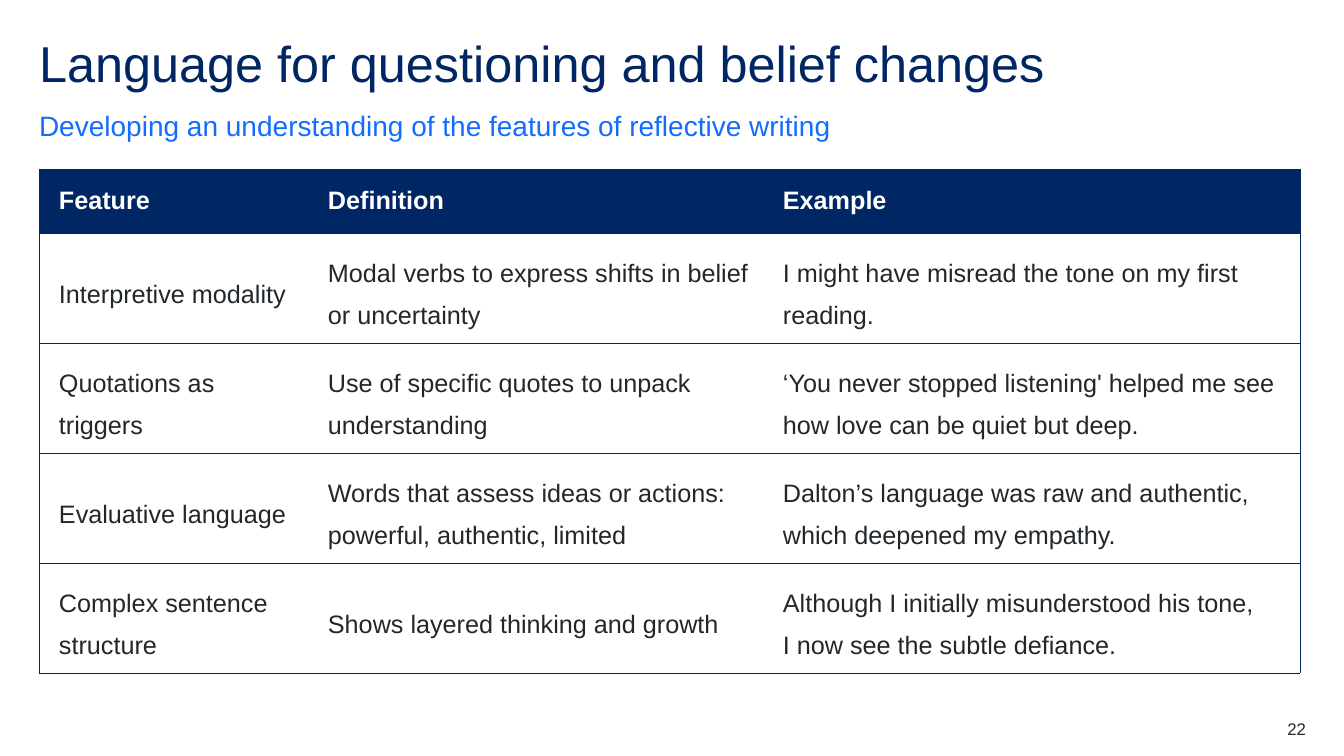
import pptx
import pptx.dml.color
import pptx.enum.text
import pptx.oxml.ns
import pptx.util
from dataclasses import dataclass
from lxml import etree

TITLE = "Language for questioning and belief changes"
SUBTITLE = "Developing an understanding of the features of reflective writing"
PAGE_NUMBER = "22"
HEADINGS = ("Feature", "Definition", "Example")
FEATURES = [
    ("Interpretive modality",
     "Modal verbs to express shifts in belief or uncertainty",
     "I might have misread the tone on my first reading."),
    ("Quotations as triggers",
     "Use of specific quotes to unpack understanding",
     "‘You never stopped listening' helped me see how love can be quiet but deep."),
    ("Evaluative language",
     "Words that assess ideas or actions: powerful, authentic, limited",
     "Dalton’s language was raw and authentic, which deepened my empathy."),
    ("Complex sentence structure",
     "Shows layered thinking and growth",
     "Although I initially misunderstood his tone, \nI now see the subtle defiance."),
]


@dataclass(frozen=True)
class Theme:
    font: str = "Arial"
    navy: str = "002664"
    blue: str = "146CFD"
    ink: str = "22272B"
    white: str = "FFFFFF"
    title_size: int = 36
    subtitle_size: int = 20
    table_size: int = 18
    number_size: int = 12
    rule_width: float = 0.5


THEME = Theme()
EMU_PER_PX = 914400 / 100.8
SLIDE_W, SLIDE_H = 1344, 756
MARGIN = 39
TEXT_W = 1266
TABLE_TOP = 169
COLUMN_WIDTHS = (269, 455, 537)
HEADER_H, ROW_H = 64, 110
CELL_INSETS = (20, 5, 10, 5)

ANCHOR = pptx.enum.text.MSO_ANCHOR
ALIGN = pptx.enum.text.PP_ALIGN


def px(length):
    return pptx.util.Emu(round(length * EMU_PER_PX))


def rgb(color):
    return pptx.dml.color.RGBColor.from_string(color)


def write(frame, text, size, color, bold=False, spacing=None):
    paragraph = frame.paragraphs[0]
    if spacing:
        paragraph.line_spacing = spacing
    for index, line in enumerate(text.split("\n")):
        if index:
            paragraph.add_line_break()
        run = paragraph.add_run()
        run.text = line
        run.font.name = THEME.font
        run.font.size = pptx.util.Pt(size)
        run.font.bold = bold
        run.font.color.rgb = rgb(color)
    return paragraph


def add_label(slide, box, text, size, color, spacing=None, anchor=ANCHOR.TOP):
    frame = slide.shapes.add_textbox(*map(px, box)).text_frame
    frame.word_wrap = True
    frame.vertical_anchor = anchor
    frame.margin_left = frame.margin_top = frame.margin_right = frame.margin_bottom = 0
    return write(frame, text, size, color, spacing=spacing)


def set_borders(cell, visible):
    """Draw the sides listed in visible (letters of LRTB) and clear the others."""
    properties = cell._tc.get_or_add_tcPr()
    qn = pptx.oxml.ns.qn
    for side in "LRTB":
        line = etree.SubElement(properties, qn("a:ln" + side))
        line.set("w", str(pptx.util.Pt(THEME.rule_width)))
        if side in visible:
            fill = etree.SubElement(line, qn("a:solidFill"))
            etree.SubElement(fill, qn("a:srgbClr")).set("val", THEME.navy)
        else:
            etree.SubElement(line, qn("a:noFill"))


def add_feature_table(slide):
    rows = [HEADINGS] + FEATURES
    heights = [HEADER_H] + [ROW_H] * len(FEATURES)
    box = (MARGIN, TABLE_TOP, sum(COLUMN_WIDTHS), sum(heights))
    table = slide.shapes.add_table(len(rows), len(HEADINGS), *map(px, box)).table
    table.horz_banding = False
    for column, width in zip(table.columns, COLUMN_WIDTHS):
        column.width = px(width)
    for row, height in zip(table.rows, heights):
        row.height = px(height)

    last_column = len(HEADINGS) - 1
    for r, texts in enumerate(rows):
        is_header = r == 0
        for c, text in enumerate(texts):
            cell = table.cell(r, c)
            cell.vertical_anchor = ANCHOR.MIDDLE
            (cell.margin_left, cell.margin_top,
             cell.margin_right, cell.margin_bottom) = map(px, CELL_INSETS)
            set_borders(cell, "TB" + "L" * (c == 0) + "R" * (c == last_column))
            cell.fill.solid()
            cell.fill.fore_color.rgb = rgb(THEME.navy if is_header else THEME.white)
            write(cell.text_frame, text, THEME.table_size,
                  THEME.white if is_header else THEME.ink,
                  bold=is_header, spacing=None if is_header else 1.5)


def main():
    deck = pptx.Presentation()
    deck.slide_width, deck.slide_height = px(SLIDE_W), px(SLIDE_H)
    slide = deck.slides.add_slide(deck.slide_layouts[6])

    add_label(slide, (MARGIN, 39, TEXT_W, 60), TITLE,
              THEME.title_size, THEME.navy, spacing=0.9)
    subtitle = add_label(slide, (MARGIN, 108, TEXT_W, 34), SUBTITLE,
                         THEME.subtitle_size, THEME.blue, spacing=1.5, anchor=ANCHOR.BOTTOM)
    subtitle.space_after = pptx.util.Pt(12)
    add_feature_table(slide)
    number = add_label(slide, (1227, 719, 79, 20), PAGE_NUMBER,
                       THEME.number_size, THEME.ink)
    number.alignment = ALIGN.RIGHT

    deck.save("out.pptx")


if __name__ == "__main__":
    main()
